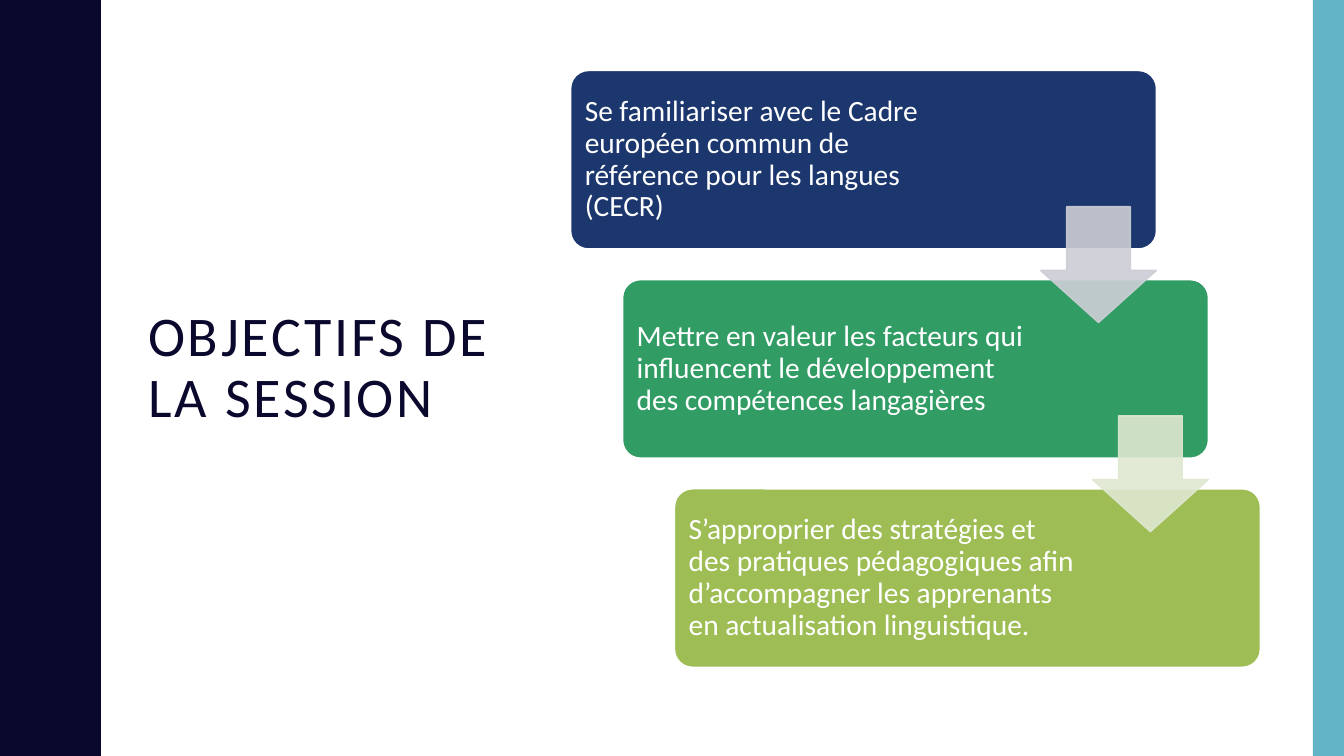
from lxml.etree import SubElement
from pptx import Presentation
from pptx.dml.color import RGBColor
from pptx.enum.shapes import MSO_SHAPE
from pptx.enum.text import MSO_ANCHOR, MSO_AUTO_SIZE, PP_ALIGN
from pptx.oxml.ns import qn
from pptx.util import Inches, Pt

COLORS = {
    "night": "0B082E",
    "sky": "62B4C6",
    "white": "FFFFFF",
    "navy": "1B376E",
    "green": "319D65",
    "olive": "9EBE55",
    "grey": "CDCED5",
    "pale": "DFE8D1",
}
STEPS = [
    ("navy", 3.9, "Se familiariser avec le Cadre européen commun de référence pour les langues (CECR)"),
    ("green", 4.04, "Mettre en valeur les facteurs qui influencent le développement "
                    "des compétences langagières"),
    ("olive", 4.04, "S’approprier des stratégies et des pratiques pédagogiques afin "
                    "d’accompagner les apprenants en actualisation linguistique."),
]
STEP_RIGHT, STEP_DOWN = 1.03 / 2, 4.15 / 2
HALF_WAVE = [
    (0.78, 0), (0.78, 0.07), (0.79, 0.14), (0.8, 0.2), (0.81, 0.25),
    (0.83, 0.29), (0.85, 0.33), (0.87, 0.38), (0.89, 0.42), (0.91, 0.46),
    (0.93, 0.5), (0.95, 0.55), (0.96, 0.61), (0.97, 0.68), (0.97, 0.75),
]
WAVE_HEIGHT, WAVE_COUNT = 1.5, 5


def color(name):
    return RGBColor.from_string(COLORS[name])


def write(frame, text, size, ink, inset, spacing=None):
    frame.word_wrap = True
    frame.auto_size = MSO_AUTO_SIZE.NONE
    frame.vertical_anchor = MSO_ANCHOR.MIDDLE
    frame.margin_left = frame.margin_right = Inches(inset)
    frame.margin_top = frame.margin_bottom = Inches(inset)
    para = frame.paragraphs[0]
    para.alignment = PP_ALIGN.LEFT
    para.line_spacing = 0.9
    span = para.add_run()
    span.text = text
    span.font.name = "Calibri"
    span.font.size = Pt(size)
    span.font.color.rgb = color(ink)
    if spacing:
        span.font._element.set("spc", str(spacing * 100))


class SlideBuilder:
    def __init__(self, deck):
        self.slide = deck.slides.add_slide(deck.slide_layouts[5])
        self.shapes = self.slide.shapes

    def paint(self, shape, fill, line=None, opacity=None):
        shape.shadow.inherit = False
        shape.fill.solid()
        shape.fill.fore_color.rgb = color(fill)
        if line:
            shape.line.color.rgb = color(line)
            shape.line.width = Pt(1)
        else:
            shape.line.fill.background()
        if opacity:
            for tint in shape._element.spPr.iter(qn("a:srgbClr")):
                SubElement(tint, qn("a:alpha"), val=str(opacity * 1000))

    def shape(self, kind, left, top, width, height, fill, line=None, adjust=(), opacity=None):
        shape = self.shapes.add_shape(kind, Inches(left), Inches(top), Inches(width), Inches(height))
        for index, value in enumerate(adjust):
            shape.adjustments[index] = value
        self.paint(shape, fill, line, opacity)

    def outline(self, points, fill):
        builder = self.shapes.build_freeform(*points[0], scale=Inches(1))
        builder.add_line_segments(points[1:], close=True)
        self.paint(builder.convert_to_shape(), fill)

    def title(self, text, left, top, width, height):
        title = self.shapes.title
        title.left, title.top = Inches(left), Inches(top)
        title.width, title.height = Inches(width), Inches(height)
        write(title.text_frame, text, 40, "night", 0.1, spacing=2)

    def text(self, text, left, top, width, height):
        box = self.shapes.add_textbox(Inches(left), Inches(top), Inches(width), Inches(height))
        write(box.text_frame, text, 21, "white", 0.09)


def wavy_edge():
    wave = HALF_WAVE + [(x, WAVE_HEIGHT - y) for x, y in HALF_WAVE[-2:0:-1]]
    edge = [(x, y + WAVE_HEIGHT * turn) for turn in range(WAVE_COUNT) for x, y in wave]
    return [(0, 0)] + edge + [(0.78, 7.5), (0, 7.5)]


def main():
    deck = Presentation()
    deck.slide_width, deck.slide_height = Inches(13.33), Inches(7.5)
    page = SlideBuilder(deck)
    page.outline(wavy_edge(), "night")
    page.shape(MSO_SHAPE.RECTANGLE, 13.02, 0, 0.31, 7.5, "sky")
    page.title("OBJECTIFS DE LA SESSION", 1.37, 0.7, 3.7, 5.92)
    for index, (fill, text_width, text) in enumerate(STEPS):
        left, top = 5.66 + index * STEP_RIGHT, 0.7 + index * STEP_DOWN
        page.shape(MSO_SHAPE.ROUNDED_RECTANGLE, left, top, 5.81, 1.77, fill, "white", [0.1])
        page.text(text, left + 0.05, top + 0.05, text_width, 1.67)
    for index, fill in enumerate(["grey", "pale"]):
        page.shape(MSO_SHAPE.DOWN_ARROW, 10.32 + index * STEP_RIGHT, 2.05 + index * STEP_DOWN,
                   1.15, 1.15, fill, fill, [0.55, 0.45], opacity=90)
    deck.save("out.pptx")


if __name__ == "__main__":
    main()
